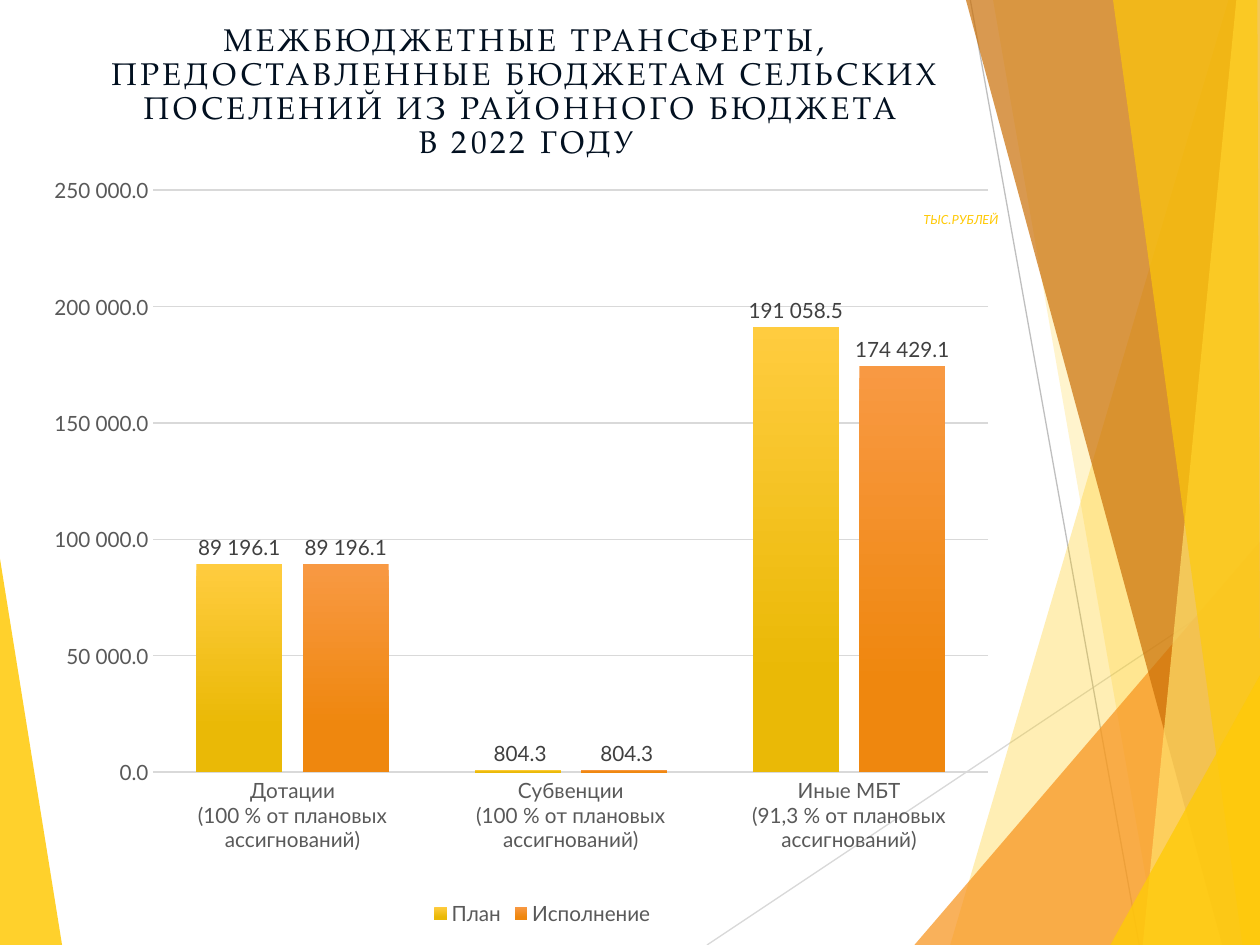
from lxml import etree
from pptx import Presentation
from pptx.chart.data import CategoryChartData
from pptx.dml.color import RGBColor
from pptx.enum.chart import (XL_CHART_TYPE, XL_LABEL_POSITION,
                             XL_LEGEND_POSITION, XL_TICK_MARK)
from pptx.enum.shapes import MSO_CONNECTOR
from pptx.enum.text import MSO_ANCHOR, MSO_AUTO_SIZE, PP_ALIGN
from pptx.oxml import parse_xml
from pptx.oxml.ns import nsdecls, qn
from pptx.util import Pt

COLUMNS = XL_CHART_TYPE.COLUMN_CLUSTERED
OUTSIDE_END = XL_LABEL_POSITION.OUTSIDE_END
BOTTOM = XL_LEGEND_POSITION.BOTTOM
NO_TICK = XL_TICK_MARK.NONE
STRAIGHT = MSO_CONNECTOR.STRAIGHT
CENTER = PP_ALIGN.CENTER
MIDDLE = MSO_ANCHOR.MIDDLE
NO_FIT = MSO_AUTO_SIZE.NONE

TITLE_ONLY = 5
W, H = 720, 540
EDGE = 720.5
NUMBER_FORMAT = r"#\ ##0.0"
GOLD = "FFCA08"
GREY = "D9D9D9"

# Theme decoration: corners, colour, opacity in percent
LEFT_WEDGE = ([(-0.5, 316), (35.5, H), (-0.5, H)], GOLD, 85)
RIGHT_SHARDS = [
    ([(702, 0), (543, H), (EDGE, H), (EDGE, 0)], GOLD, 30),
    ([(567.5, 0), (661.5, H), (EDGE, H), (EDGE, 0)], GOLD, 20),
    ([(522.5, H), (EDGE, 309), (EDGE, H)], "F8931D", 72),
    ([(552, 0), (698.5, H), (EDGE, H), (EDGE, 0)], "CA6F06", 70),
    ([(706.5, 0), (653, H), (EDGE, H), (EDGE, 0)], "FFDF6B", 70),
    ([(636, 0), (710, H), (EDGE, H), (718.5, 0)], GOLD, 65),
    ([(634.5, H), (EDGE, 385), (EDGE, H)], GOLD, 80),
]
THIN_LINES = [((404, H), (EDGE, 329), GREY),
              ((554.5, 0), (651, H), "BFBFBF")]

CATEGORIES = ["Дотации\n(100 % от плановых ассигнований)",
              "Субвенции\n(100 % от плановых ассигнований)",
              "Иные МБТ\n(91,3 % от плановых ассигнований)"]
# Name, values, gradient from top to bottom
SERIES = [("План", (89196.1, 804.3, 191058.5), ("FFCC3F", "EAB906")),
          ("Исполнение", (89196.1, 804.3, 174429.1), ("F89943", "EF870E"))]


def rgb(value):
    return RGBColor.from_string(value)


def style_font(font, size, color, name):
    font.size = Pt(size)
    font.name = name
    font.color.rgb = rgb(color)


def add_shard(s, points, color, opacity):
    corners = [(Pt(x), Pt(y)) for x, y in points]
    builder = s.shapes.build_freeform(*corners[0])
    builder.add_line_segments(corners[1:])
    sp = builder.convert_to_shape()
    sp.shadow.inherit = False
    sp.line.fill.background()
    sp.fill.solid()
    sp.fill.fore_color.rgb = rgb(color)
    clr = sp.element.spPr.find(".//" + qn("a:srgbClr"))
    etree.SubElement(clr, qn("a:alpha")).set("val", str(opacity * 1000))


def add_thin_line(s, start, end, color):
    line = s.shapes.add_connector(STRAIGHT, *map(Pt, start + end))
    line.line.color.rgb = rgb(color)
    line.line.width = Pt(0.75)
    etree.SubElement(line.element.spPr, qn("a:effectLst"))


def style_series(series, colors):
    fill = series.format.fill
    fill.gradient()
    fill.gradient_angle = 270
    for stop, position, color in zip(fill.gradient_stops, (0, 0.78), colors):
        stop.position = position
        stop.color.rgb = rgb(color)
    labels = series.data_labels
    labels.show_value = True
    labels.position = OUTSIDE_END
    labels.number_format = NUMBER_FORMAT
    labels.number_format_is_linked = False
    style_font(labels.font, 12, "404040", "Lato")


def set_plot_area(chart, x, y, w, h):
    area = chart.element.find(".//" + qn("c:plotArea"))
    for old in area.findall(qn("c:layout")):
        area.remove(old)
    area.insert(0, parse_xml(
        f'<c:layout {nsdecls("c")}><c:manualLayout>'
        '<c:layoutTarget val="inner"/>'
        '<c:xMode val="edge"/><c:yMode val="edge"/>'
        f'<c:x val="{x}"/><c:y val="{y}"/><c:w val="{w}"/><c:h val="{h}"/>'
        '</c:manualLayout></c:layout>'))


def style_axes(chart):
    cat, val = chart.category_axis, chart.value_axis
    for axis in (cat, val):
        axis.major_tick_mark = axis.minor_tick_mark = NO_TICK
        style_font(axis.tick_labels.font, 12, "595959", "Lato")
    cat.format.line.color.rgb = rgb(GREY)
    cat.format.line.width = Pt(1)
    val.format.line.fill.background()
    val.minimum_scale, val.maximum_scale, val.major_unit = 0, 250000, 50000
    val.tick_labels.number_format = NUMBER_FORMAT
    val.tick_labels.number_format_is_linked = False
    grid = val.major_gridlines.format.line
    grid.color.rgb = rgb(GREY)
    grid.width = Pt(0.75)


def add_transfers_chart(s):
    data = CategoryChartData(number_format=NUMBER_FORMAT)
    data.categories = CATEGORIES
    for name, values, _ in SERIES:
        data.add_series(name, values)
    chart = s.shapes.add_chart(COLUMNS, Pt(31), Pt(100), Pt(550), Pt(432),
                               data).chart
    chart.has_title = False
    style_font(chart.font, 10, "000000", "Lato")
    plot = chart.plots[0]
    plot.vary_by_categories = False
    plot.gap_width, plot.overlap = 100, -24
    for series, (_, _, colors) in zip(plot.series, SERIES):
        style_series(series, colors)
    style_axes(chart)
    set_plot_area(chart, 0.09, 0.02, 0.88, 0.77)
    chart.has_legend = True
    chart.legend.position = BOTTOM
    chart.legend.include_in_layout = False
    style_font(chart.legend.font, 12, "595959", "Lato")


def add_unit_note(s, text):
    tf = s.shapes.add_textbox(Pt(520.5), Pt(116.5), Pt(63), Pt(17)).text_frame
    tf.word_wrap = True
    r = tf.paragraphs[0].add_run()
    r.text = text
    r.font.italic = True
    style_font(r.font, 8, GOLD, "Calibri")


def fill_title(s, lines):
    sp = s.shapes.title
    sp.left, sp.top, sp.width, sp.height = Pt(8.5), Pt(11), Pt(584), Pt(83.5)
    tf = sp.text_frame
    tf.word_wrap = True
    tf.auto_size = NO_FIT
    tf.vertical_anchor = MIDDLE
    for i, line in enumerate(lines):
        p = tf.add_paragraph() if i else tf.paragraphs[0]
        p.alignment = CENTER
        p.line_spacing = 0.9
        p.space_before = Pt(0)
        r = p.add_run()
        r.text = line
        style_font(r.font, 18, "021020", "TeX Gyre Pagella")
        r.font._element.set("spc", "200")
    # Bring the title in front of the decoration
    sp.element.getparent().append(sp.element)


def main():
    prs = Presentation()
    prs.slide_width, prs.slide_height = Pt(W), Pt(H)
    s = prs.slides.add_slide(prs.slide_layouts[TITLE_ONLY])

    # Background decoration
    add_shard(s, *LEFT_WEDGE)
    for line in THIN_LINES:
        add_thin_line(s, *line)
    for shard in RIGHT_SHARDS:
        add_shard(s, *shard)

    # Content
    add_transfers_chart(s)
    add_unit_note(s, "ТЫС.РУБЛЕЙ")
    fill_title(s, ["МЕЖБЮДЖЕТНЫЕ ТРАНСФЕРТЫ, ПРЕДОСТАВЛЕННЫЕ БЮДЖЕТАМ "
                   "СЕЛЬСКИХ ПОСЕЛЕНИЙ ИЗ РАЙОННОГО БЮДЖЕТА ",
                   "В 2022 ГОДУ"])
    prs.save("out.pptx")


if __name__ == "__main__":
    main()
